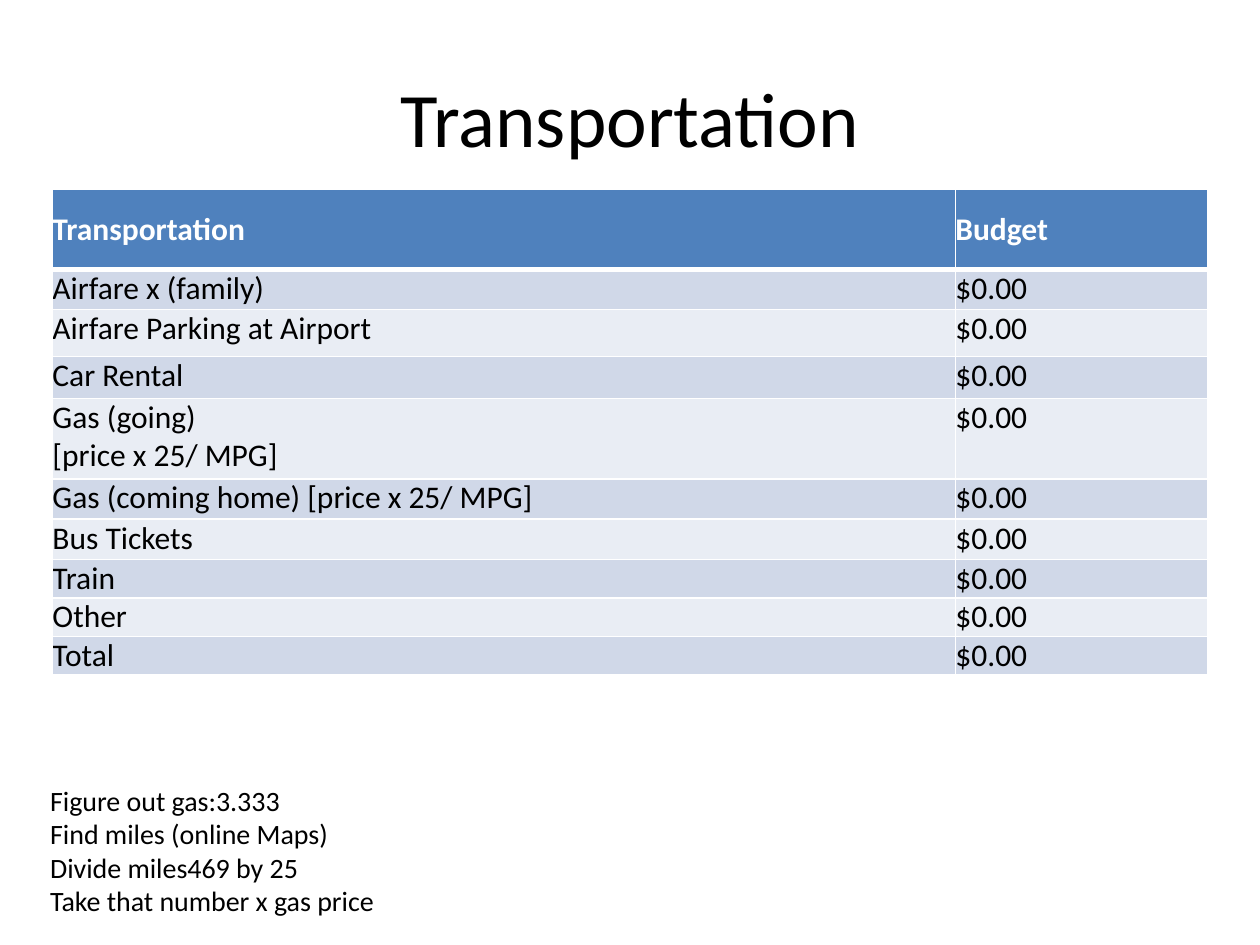
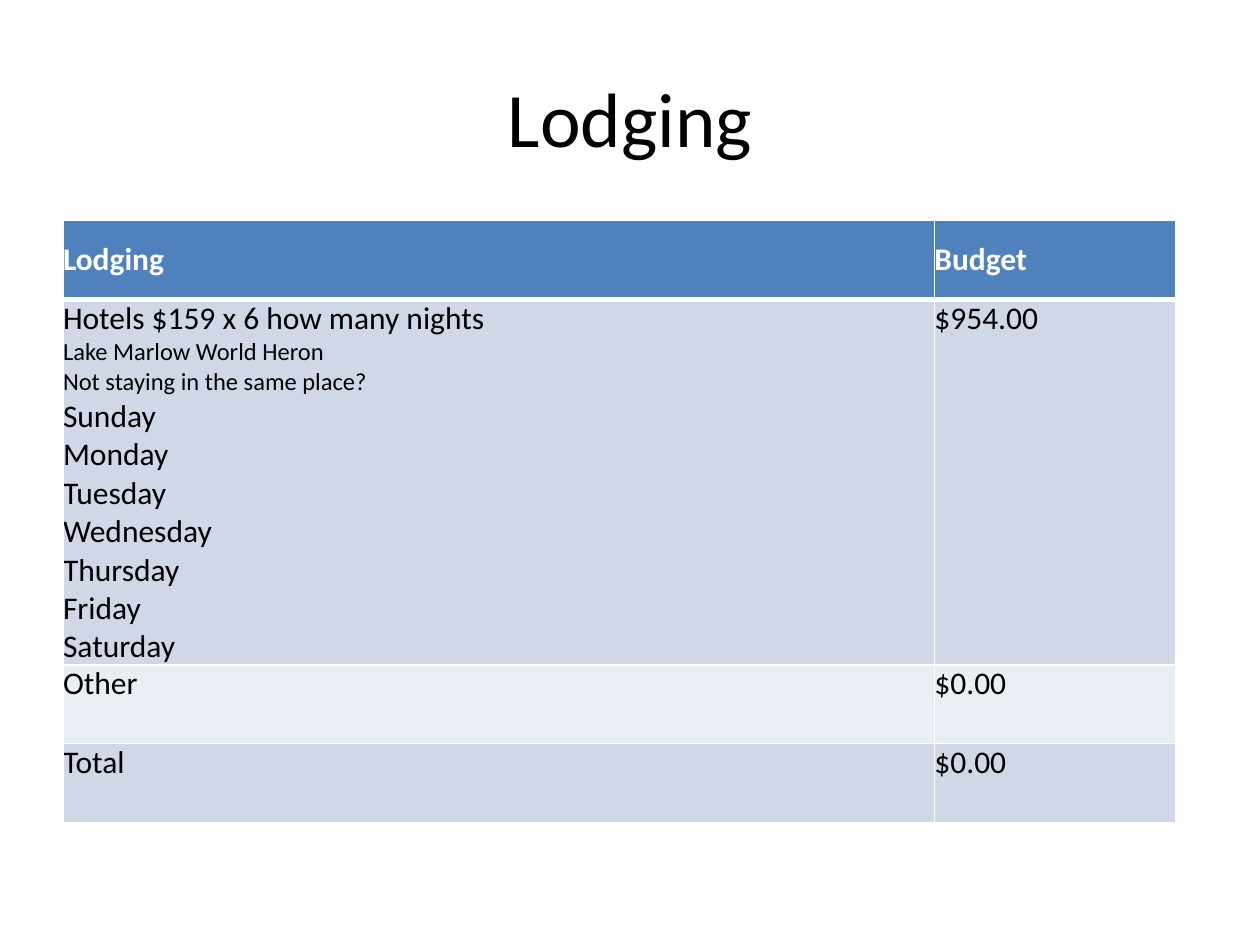
from lxml import etree
from pptx import Presentation
from pptx import util as u
from pptx.dml.color import RGBColor
from pptx.enum import text
from pptx.oxml import ns

BLACK = RGBColor(0x00, 0x00, 0x00)
WHITE = RGBColor(0xFF, 0xFF, 0xFF)
HEADER_BLUE = RGBColor(0x4F, 0x81, 0xBD)
BANDS = [RGBColor(0xD0, 0xD8, 0xE8), RGBColor(0xE9, 0xED, 0xF4)]
FONT = "Calibri"
BODY_SIZE = 18
SMALL_SIZE = 14
THIN, THICK = 1, 3


def write(frame, lines, size=BODY_SIZE, color=BLACK, bold=False,
          align=text.PP_ALIGN.LEFT, small=()):
    """Fill a text frame, one paragraph a line; lines in small are set smaller."""
    for number, line in enumerate(lines):
        paragraph = frame.paragraphs[0] if number == 0 else frame.add_paragraph()
        paragraph.alignment = align
        run = paragraph.add_run()
        run.text = line
        run.font.name = FONT
        run.font.size = u.Pt(SMALL_SIZE if line in small else size)
        run.font.bold = bold
        run.font.color.rgb = color


def add_border(cell, side, width):
    line = etree.SubElement(cell._tc.get_or_add_tcPr(), ns.qn(f"a:ln{side}"),
                            w=str(u.Pt(width)))
    fill = etree.SubElement(line, ns.qn("a:solidFill"))
    etree.SubElement(fill, ns.qn("a:srgbClr"), val=str(WHITE))


hotel_notes = ["Lake Marlow World Heron", "Not staying in the same place?"]
weekdays = ["Sunday", "Monday", "Tuesday", "Wednesday", "Thursday", "Friday",
            "Saturday"]

# Each expense: lines of the label, budget, row height
budgets = [
    {
        "title": "Transportation",
        "corner": (30, 108),
        "columns": (516, 144),
        "header_height": 46,
        "expenses": [
            (["Airfare x (family)"], "$0.00", 23),
            (["Airfare Parking at Airport"], "$0.00", 26.7),
            (["Car Rental"], "$0.00", 24),
            (["Gas (going)", "[price x 25/ MPG]"], "$0.00", 46),
            (["Gas (coming home) [price x 25/ MPG]"], "$0.00", 23),
            (["Bus Tickets"], "$0.00", 23),
            (["Train"], "$0.00", 22),
            (["Other"], "$0.00", 22),
            (["Total"], "$0.00", 22),
        ],
        "gas_steps": ["Figure out gas:3.333", "Find miles (online Maps)",
                      "Divide miles469 by 25", "Take that number x gas price"],
    },
    {
        "title": "Lodging",
        "corner": (36, 126),
        "columns": (498, 138),
        "header_height": 45,
        "expenses": [
            (["Hotels $159 x 6 how many nights", *hotel_notes, *weekdays],
             "$954.00", 209),
            (["Other"], "$0.00", 45),
            (["Total"], "$0.00", 45),
        ],
        "gas_steps": [],
    },
]

prs = Presentation()
prs.slide_width, prs.slide_height = u.Pt(720), u.Pt(540)

for budget in budgets:
    slide = prs.slides.add_slide(prs.slide_layouts[6])

    title = slide.shapes.add_textbox(u.Pt(36), u.Pt(21.6), u.Pt(648), u.Pt(90)).text_frame
    title.word_wrap = True
    title.vertical_anchor = text.MSO_ANCHOR.MIDDLE
    write(title, [budget["title"]], size=44, align=text.PP_ALIGN.CENTER)

    rows = [([budget["title"]], "Budget", budget["header_height"]), *budget["expenses"]]
    left, top = budget["corner"]
    table = slide.shapes.add_table(
        len(rows), 2, u.Pt(left), u.Pt(top),
        u.Pt(sum(budget["columns"])), u.Pt(sum(row[2] for row in rows))).table
    for column, width in zip(table.columns, budget["columns"]):
        column.width = u.Pt(width)

    for r, (label, amount, height) in enumerate(rows):
        is_header = r == 0
        table.rows[r].height = u.Pt(height)
        for c, lines in enumerate([label, [amount]]):
            cell = table.cell(r, c)
            cell.margin_left = cell.margin_right = 0
            cell.margin_top = cell.margin_bottom = 0
            cell.vertical_anchor = text.MSO_ANCHOR.MIDDLE if is_header else text.MSO_ANCHOR.TOP
            add_border(cell, "L", THIN)
            add_border(cell, "R", THIN)
            add_border(cell, "T", THICK if r == 1 else THIN)
            add_border(cell, "B", THICK if is_header else THIN)
            cell.fill.solid()
            cell.fill.fore_color.rgb = HEADER_BLUE if is_header else BANDS[(r - 1) % 2]
            write(cell.text_frame, lines, color=WHITE if is_header else BLACK,
                  bold=is_header, small=hotel_notes)

    if budget["gas_steps"]:
        steps = slide.shapes.add_textbox(u.Pt(21.6), u.Pt(444), u.Pt(201.6), u.Pt(85)).text_frame
        steps.word_wrap = False
        write(steps, budget["gas_steps"], size=16)

prs.save("out.pptx")
